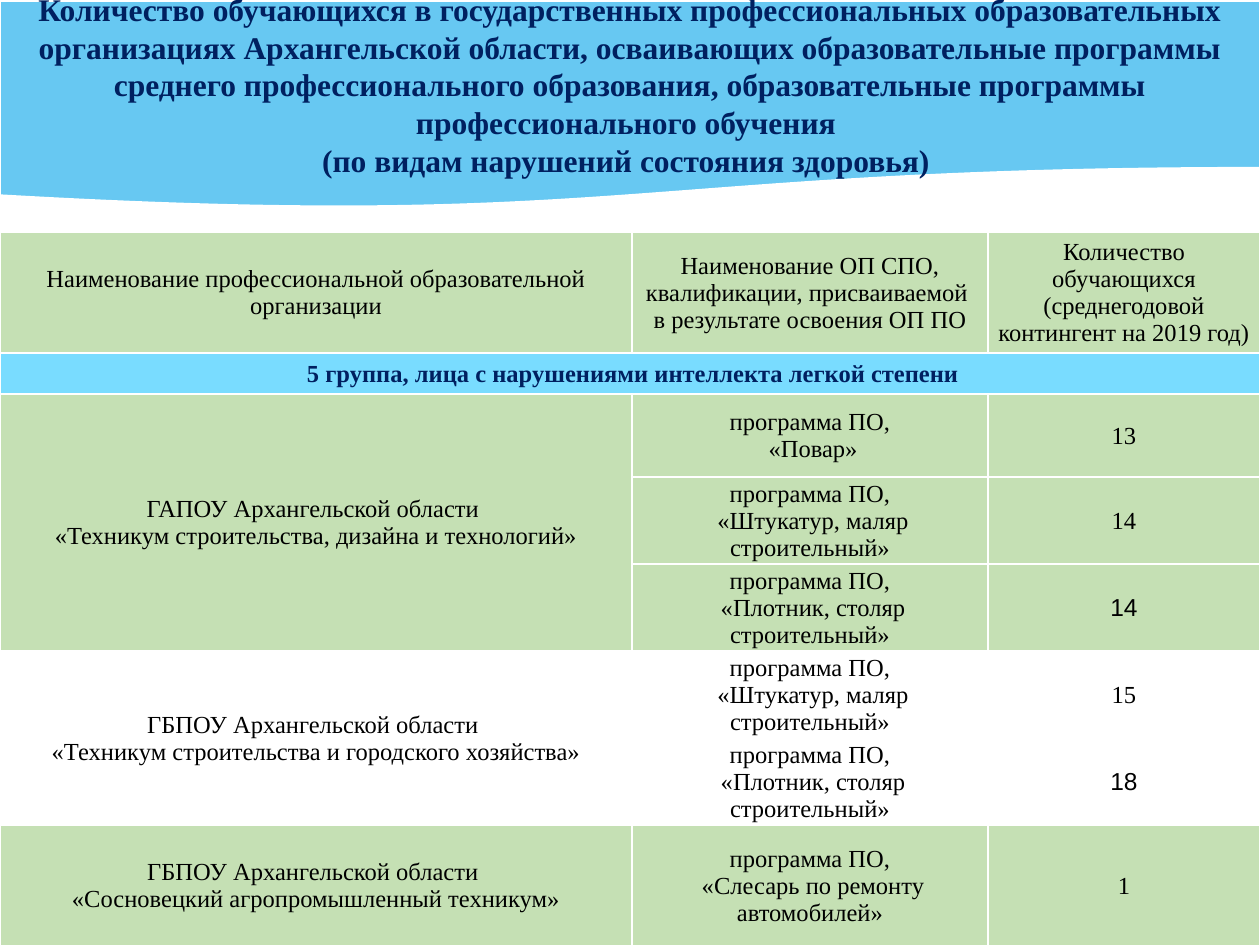
import pptx
import pptx.util
import pptx.dml.color
import pptx.enum.shapes
import pptx.enum.text
import lxml.etree

SCALE = 914400 / 126
SERIF = "Times New Roman"
SANS = "Arial"
GREEN, WHITE, SKY, AQUA = "C5E0B4", "FFFFFF", "67C8F2", "79DCFF"
NAVY, BLACK = "002060", "000000"
COLS = [632, 356, 272]
ROWS = [121, 41, 83, 87, 87, 87, 87, 121]

TITLE = (
    "Количество обучающихся в государственных профессиональных образовательных "
    "организациях Архангельской области, осваивающих образовательные программы "
    "среднего профессионального образования, образовательные программы "
    "профессионального обучения \n(по видам нарушений состояния здоровья) "
)
HEADS = [
    "Наименование профессиональной образовательной организации",
    "Наименование ОП СПО, квалификации, присваиваемой \nв результате освоения ОП ПО",
    "Количество обучающихся (среднегодовой контингент на 2019 год)",
]
GROUP = " 5 группа, лица с нарушениями интеллекта легкой степени"
# school, fill, then (trade, count, font of count)
SCHOOLS = [
    ("«Техникум строительства, дизайна и технологий»", "ГАПОУ", GREEN, [
        ("Повар", 13, SERIF),
        ("Штукатур, маляр строительный", 14, SERIF),
        ("Плотник, столяр строительный", 14, SANS),
    ]),
    ("«Техникум строительства и городского хозяйства»", "ГБПОУ", WHITE, [
        ("Штукатур, маляр строительный", 15, SERIF),
        ("Плотник, столяр строительный", 18, SANS),
    ]),
    ("«Сосновецкий агропромышленный техникум»", "ГБПОУ", GREEN, [
        ("Слесарь по ремонту автомобилей", 1, SERIF),
    ]),
]


def px(num):
    return pptx.util.Emu(round(num * SCALE))


def color(code):
    return pptx.dml.color.RGBColor.from_string(code)


def paint(item, code):
    item.fill.solid()
    item.fill.fore_color.rgb = color(code)


def write(frame, text, size=14, font=SERIF, ink=BLACK, bold=False):
    """Fill a text frame with centred text, one paragraph a line."""
    frame.word_wrap = True
    for i, line in enumerate(text.split("\n")):
        para = frame.add_paragraph() if i else frame.paragraphs[0]
        para.alignment = pptx.enum.text.PP_ALIGN.CENTER
        run = para.add_run()
        run.text = line
        run.font.size = pptx.util.Pt(size)
        run.font.name = font
        run.font.bold = bold
        run.font.color.rgb = color(ink)


def edge(cell, code):
    """Draw 1 pt lines on all four sides of a cell."""
    props = cell._tc.get_or_add_tcPr()
    for i, side in enumerate(("lnL", "lnR", "lnT", "lnB")):
        line = lxml.etree.fromstring(
            '<a:%s xmlns:a="http://schemas.openxmlformats.org/drawingml/2006/main"'
            ' w="12700"><a:solidFill><a:srgbClr val="%s"/></a:solidFill></a:%s>'
            % (side, code, side))
        props.insert(i, line)


def fill_cell(cell, text, **form):
    cell.vertical_anchor = pptx.enum.text.MSO_ANCHOR.MIDDLE
    write(cell.text_frame, text, **form)


def banner(slide, left, top, width, height):
    shape = slide.shapes.add_shape(
        pptx.enum.shapes.MSO_SHAPE.FLOWCHART_DOCUMENT,
        px(left), px(top), px(width), px(height))
    shape.shadow.inherit = False
    paint(shape, SKY)
    shape.line.color.rgb = color(WHITE)
    shape.line.width = pptx.util.Pt(1)
    shape.text_frame.vertical_anchor = pptx.enum.text.MSO_ANCHOR.MIDDLE
    write(shape.text_frame, TITLE, size=18, ink=NAVY, bold=True)


def grid(slide, left, top):
    table = slide.shapes.add_table(
        len(ROWS), len(COLS), px(left), px(top), px(sum(COLS)), px(sum(ROWS))).table
    for col, width in zip(table.columns, COLS):
        col.width = px(width)
    for row, height in zip(table.rows, ROWS):
        row.height = px(height)

    fills = [GREEN, AQUA]
    for school in SCHOOLS:
        fills += [school[2]] * len(school[3])
    for row, code in zip(table.rows, fills):
        for cell in row.cells:
            cell.margin_left = cell.margin_right = cell.margin_top = px(1)
            cell.margin_bottom = 0
            paint(cell, code)
            edge(cell, WHITE)

    for i, head in enumerate(HEADS):
        fill_cell(table.cell(0, i), head)
    table.cell(1, 0).merge(table.cell(1, 2))
    fill_cell(table.cell(1, 0), GROUP, ink=NAVY, bold=True)

    first = 2
    for name, kind, _, trades in SCHOOLS:
        last = first + len(trades) - 1
        if last > first:
            table.cell(first, 0).merge(table.cell(last, 0))
        fill_cell(table.cell(first, 0), f"{kind} Архангельской области \n{name}")
        for row, (trade, count, font) in enumerate(trades, first):
            fill_cell(table.cell(row, 1), f"программа ПО,\n «{trade}»")
            fill_cell(table.cell(row, 2), str(count), font=font)
        first = last + 1


def main():
    deck = pptx.Presentation()
    deck.slide_width, deck.slide_height = px(1260), px(945)
    slide = deck.slides.add_slide(deck.slide_layouts[6])
    grid(slide, 0, 232)
    banner(slide, 0, 1, 1260, 208)
    deck.save("out.pptx")


if __name__ == "__main__":
    main()
